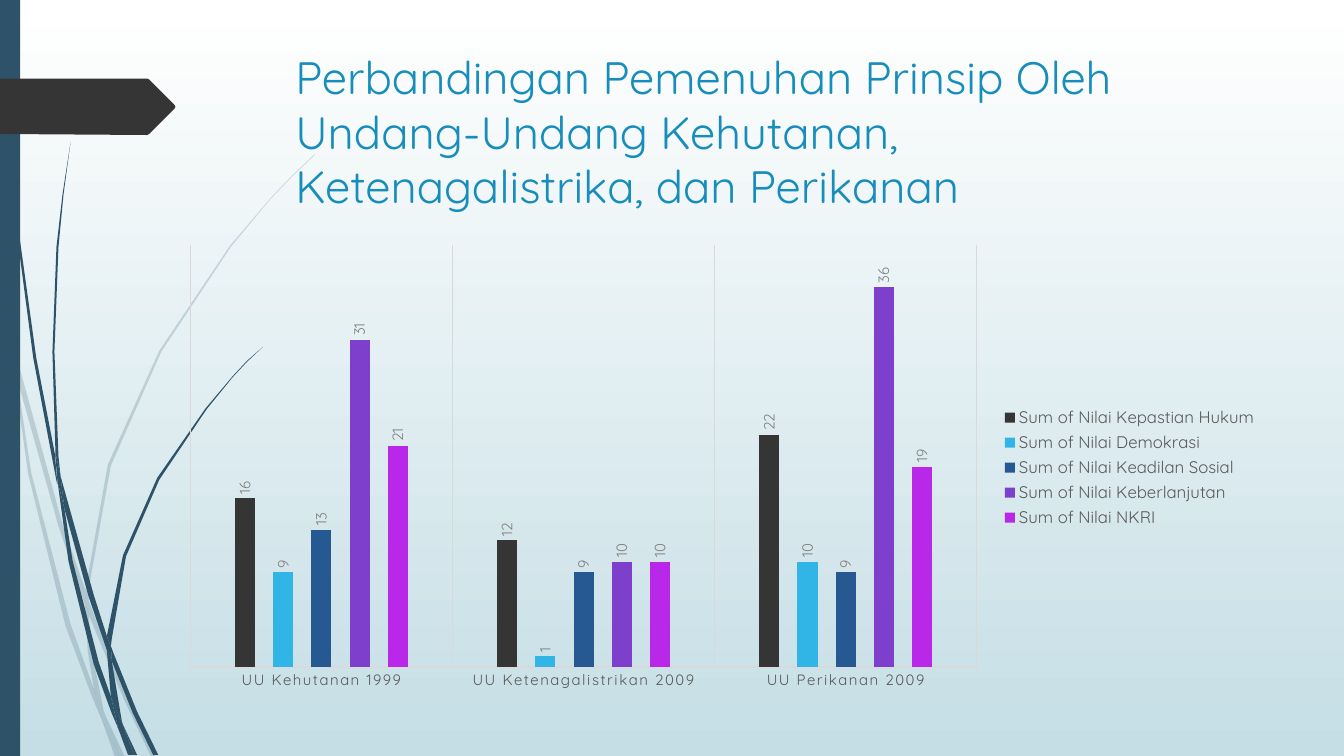
from lxml import etree
from pptx import Presentation, util as u
from pptx.chart.data import CategoryChartData
from pptx.dml.color import RGBColor
from pptx.enum import chart as charts, shapes, text
from pptx.oxml.ns import qn

FONT = "Quicksand"
COLORS = {
    "white": "FFFFFF", "mist": "C5DEE5", "stem": "2E5369", "tag": "353535",
    "title": "178DBB", "axis_text": "595959", "label": "808080", "line": "D9D9D9",
}
CATEGORIES = ["UU Kehutanan 1999", "UU Ketenagalistrikan 2009", "UU Perikanan 2009"]
SERIES = [
    ("Sum of Nilai Kepastian Hukum", [16, 12, 22], "353535"),
    ("Sum of Nilai Demokrasi", [9, 1, 10], "31B4E6"),
    ("Sum of Nilai Keadilan Sosial", [13, 9, 9], "265991"),
    ("Sum of Nilai Keberlanjutan", [31, 10, 36], "7E40CC"),
    ("Sum of Nilai NKRI", [21, 10, 19], "B927E9"),
]
PALE_BLADES = [
    [(0.11, 3.5), (0.09, 3.22), (0, 2.82), (0, 2.99), (0.1, 3.44)],
    [(0.58, 5.22), (0.84, 5.99), (0.85, 5.86), (0.62, 5.2), (0.14, 3.45), (0.17, 3.76)],
    [(0.92, 6.07), (0.88, 5.96), (0.88, 6.1), (1.23, 6.94), (1.5, 7.51), (1.55, 7.51), (1.27, 6.92)],
    [(1.19, 7.51), (1.24, 7.51), (1.05, 7.11)],
    [(0.93, 6.83), (0.7, 6.19), (0.31, 4.69), (0.17, 3.76), (0.11, 3.5), (0.28, 4.7),
     (0.65, 6.21), (0.92, 6.93), (1.01, 7.14), (0.99, 7.07)],
    [(0.84, 5.99), (0.87, 6.46), (0.93, 6.83), (0.96, 6.92), (1.05, 7.11), (1.03, 7.06),
     (0.91, 6.46), (0.88, 6.1), (0.88, 6.08)],
    [(0.88, 5.84), (1.1, 4.62), (1.6, 3.49), (2.29, 2.45), (2.68, 1.98), (2.9, 1.75), (3.12, 1.54),
     (3.12, 1.53), (2.89, 1.75), (2.68, 1.97), (2.28, 2.44), (1.58, 3.48), (1.07, 4.61),
     (0.85, 5.84), (0.85, 5.86), (0.88, 5.96)],
    [(1.01, 7.14), (1.14, 7.51), (1.19, 7.51)],
    [(0.88, 6.08), (0.88, 6.1), (0.88, 5.96), (0.85, 5.86), (0.84, 5.99)],
    [(0.96, 6.92), (0.93, 6.83), (0.99, 7.07), (1.01, 7.14), (1.19, 7.51), (1.05, 7.11)],
]
DARK_BLADES = [
    [(0.07, 1.1), (0.17, 2.33), (0.33, 3.55), (0.56, 4.77), (0.57, 4.81), (0.55, 4.57), (0.55, 4.53),
     (0.36, 3.55), (0.19, 2.32), (0.08, 1.09), (0.05, 0.48), (0.04, 0), (0.03, 0), (0.04, 0.48)],
    [(0.88, 5.92), (1.06, 6.45), (1.06, 6.31), (0.93, 5.9), (0.6, 4.72), (0.64, 5.05)],
    [(1.13, 6.49), (1.1, 6.41), (1.11, 6.56), (1.32, 7.08), (1.52, 7.49), (1.57, 7.49), (1.36, 7.06)],
    [(1.1, 6.91), (0.98, 6.57), (0.72, 5.56), (0.64, 5.05), (0.57, 4.77), (0.68, 5.57),
     (0.93, 6.59), (1.11, 7.08), (1.17, 7.22), (1.16, 7.17)],
    [(0.6, 4.72), (0.58, 4.53), (0.54, 3.49), (0.58, 2.45), (0.63, 1.93), (0.7, 1.41),
     (0.62, 1.93), (0.56, 2.45), (0.52, 3.49), (0.55, 4.49)],
    [(1.33, 7.49), (1.36, 7.49), (1.22, 7.19)],
    [(0.57, 4.77), (0.64, 5.05), (0.6, 4.72), (0.55, 4.49), (0.55, 4.53)],
    [(1.11, 6.33), (1.25, 5.52), (1.58, 4.76), (2.05, 4.06), (2.31, 3.74), (2.45, 3.59), (2.61, 3.44),
     (2.45, 3.58), (2.31, 3.73), (2.04, 4.05), (1.56, 4.74), (1.22, 5.51), (1.06, 6.31), (1.1, 6.41)],
    [(1.17, 7.22), (1.27, 7.49), (1.31, 7.49)],
    [(1.06, 6.45), (1.1, 6.91), (1.16, 7.06), (1.22, 7.19), (1.21, 7.16), (1.11, 6.56), (1.09, 6.51)],
    [(1.06, 6.45), (1.09, 6.51), (1.11, 6.56), (1.1, 6.41), (1.06, 6.31)],
    [(1.16, 7.06), (1.1, 6.91), (1.16, 7.17), (1.17, 7.22), (1.3, 7.49), (1.33, 7.49), (1.22, 7.19)],
]
TAG = [(0, 0.78), (1.46, 0.78), (1.48, 0.79), (1.73, 1.04), (1.74, 1.06), (1.73, 1.08),
       (1.48, 1.33), (1.46, 1.34), (0, 1.33)]


def rgb(value):
    return RGBColor.from_string(COLORS.get(value, value))


def format_font(font, size, color):
    font.name = FONT
    font.size = u.Pt(size)
    font.bold = False
    font.color.rgb = rgb(color)


def write_text(frame, content, size, color):
    frame.text = content
    paragraph = frame.paragraphs[0]
    paragraph.alignment = text.PP_ALIGN.LEFT
    format_font(paragraph.runs[0].font, size, color)


def paint(shape, color, opacity=100):
    shape.shadow.inherit = False
    shape.fill.solid()
    shape.fill.fore_color.rgb = rgb(color)
    shape.line.fill.background()
    if opacity < 100:
        fill_color = shape.fill._xPr.find(".//" + qn("a:srgbClr"))
        etree.SubElement(fill_color, qn("a:alpha"), val=str(opacity * 1000))


def add_outline(slide, left, top, points, color, opacity=100):
    outline = [(u.Inches(left + x), u.Inches(top + y)) for x, y in points]
    builder = slide.shapes.build_freeform(*outline[0])
    builder.add_line_segments(outline[1:], close=True)
    paint(builder.convert_to_shape(), color, opacity)


def add_decoration(slide, left, top, height):
    for blades, opacity in ((PALE_BLADES, 20), (DARK_BLADES, 100)):
        for points in blades:
            add_outline(slide, left, top, points, "stem", opacity)
    band = slide.shapes.add_shape(
        shapes.MSO_SHAPE.RECTANGLE, u.Inches(left), u.Inches(top), u.Inches(0.2), u.Inches(height))
    paint(band, "stem")
    add_outline(slide, left, top, TAG, "tag")


def add_title(slide, left, top, width, height):
    title = slide.shapes.title
    title.left, title.top = u.Inches(left), u.Inches(top)
    title.width, title.height = u.Inches(width), u.Inches(height)
    frame = title.text_frame
    frame.word_wrap = True
    frame.auto_size = text.MSO_AUTO_SIZE.NONE
    frame.vertical_anchor = text.MSO_ANCHOR.TOP
    write_text(
        frame,
        "Perbandingan Pemenuhan Prinsip Oleh Undang-Undang Kehutanan, Ketenagalistrika, dan Perikanan",
        size=32.4, color="title")
    slide.shapes._spTree.append(title._element)


def place_plot(chart, **fractions):
    area = chart._chartSpace.find(".//" + qn("c:plotArea"))
    layout = area.find(qn("c:layout"))
    if layout is None:
        layout = etree.Element(qn("c:layout"))
        area.insert(0, layout)
    manual = etree.SubElement(layout, qn("c:manualLayout"))
    settings = {"layoutTarget": "inner", "xMode": "edge", "yMode": "edge", **fractions}
    for name, value in settings.items():
        etree.SubElement(manual, qn("c:" + name), val=str(value))


def format_axes(chart):
    category_axis, value_axis = chart.category_axis, chart.value_axis
    category_axis.major_tick_mark = charts.XL_TICK_MARK.NONE
    category_axis.has_major_gridlines = True
    for line in (category_axis.format.line, category_axis.major_gridlines.format.line):
        line.color.rgb = rgb("line")
        line.width = u.Pt(0.75)
    format_font(category_axis.tick_labels.font, 10.64, "axis_text")
    category_axis._element.find(".//" + qn("a:defRPr")).set("spc", "120")
    value_axis.minimum_scale, value_axis.maximum_scale = 0, 40
    value_axis.has_major_gridlines = False
    value_axis.visible = False


def format_series(series, color):
    series.format.fill.solid()
    series.format.fill.fore_color.rgb = rgb(color)
    series.invert_if_negative = False
    labels = series.data_labels
    labels.show_value = True
    labels.position = charts.XL_LABEL_POSITION.OUTSIDE_END
    format_font(labels.font, 10.64, "label")
    body = labels._element.find(".//" + qn("a:bodyPr"))
    body.set("rot", "-5400000")
    body.set("vert", "horz")


def add_comparison_chart(slide, left, top, width, height):
    data = CategoryChartData()
    data.categories = CATEGORIES
    for name, values, _ in SERIES:
        data.add_series(name, values)
    chart = slide.shapes.add_chart(
        charts.XL_CHART_TYPE.COLUMN_CLUSTERED, u.Inches(left), u.Inches(top),
        u.Inches(width), u.Inches(height), data).chart
    format_font(chart.font, 10, "axis_text")
    chart.has_title = False
    chart.has_legend = True
    chart.legend.position = charts.XL_LEGEND_POSITION.RIGHT
    chart.legend.include_in_layout = False
    format_font(chart.legend.font, 11.97, "axis_text")
    plot = chart.plots[0]
    plot.gap_width, plot.overlap = 444, -90
    plot.vary_by_categories = False
    for series, (_, _, color) in zip(plot.series, SERIES):
        format_series(series, color)
    format_axes(chart)
    place_plot(chart, x=0.02, y=0.02, w=0.715, h=0.91)


def set_background(slide):
    fill = slide.background.fill
    fill.gradient()
    fill.gradient_angle = 270
    for stop, color, position in zip(fill.gradient_stops, ("white", "mist"), (0, 1)):
        stop.color.rgb = rgb(color)
        stop.position = position


def main():
    presentation = Presentation()
    presentation.slide_width, presentation.slide_height = u.Inches(13.33), u.Inches(7.5)
    slide = presentation.slides.add_slide(presentation.slide_layouts[5])
    set_background(slide)
    add_decoration(slide, 0, 0, 7.5)
    add_title(slide, 2.83, 0.44, 9.75, 1.4)
    add_comparison_chart(slide, 1.67, 2.34, 10.91, 4.6)
    presentation.save("out.pptx")


if __name__ == "__main__":
    main()
